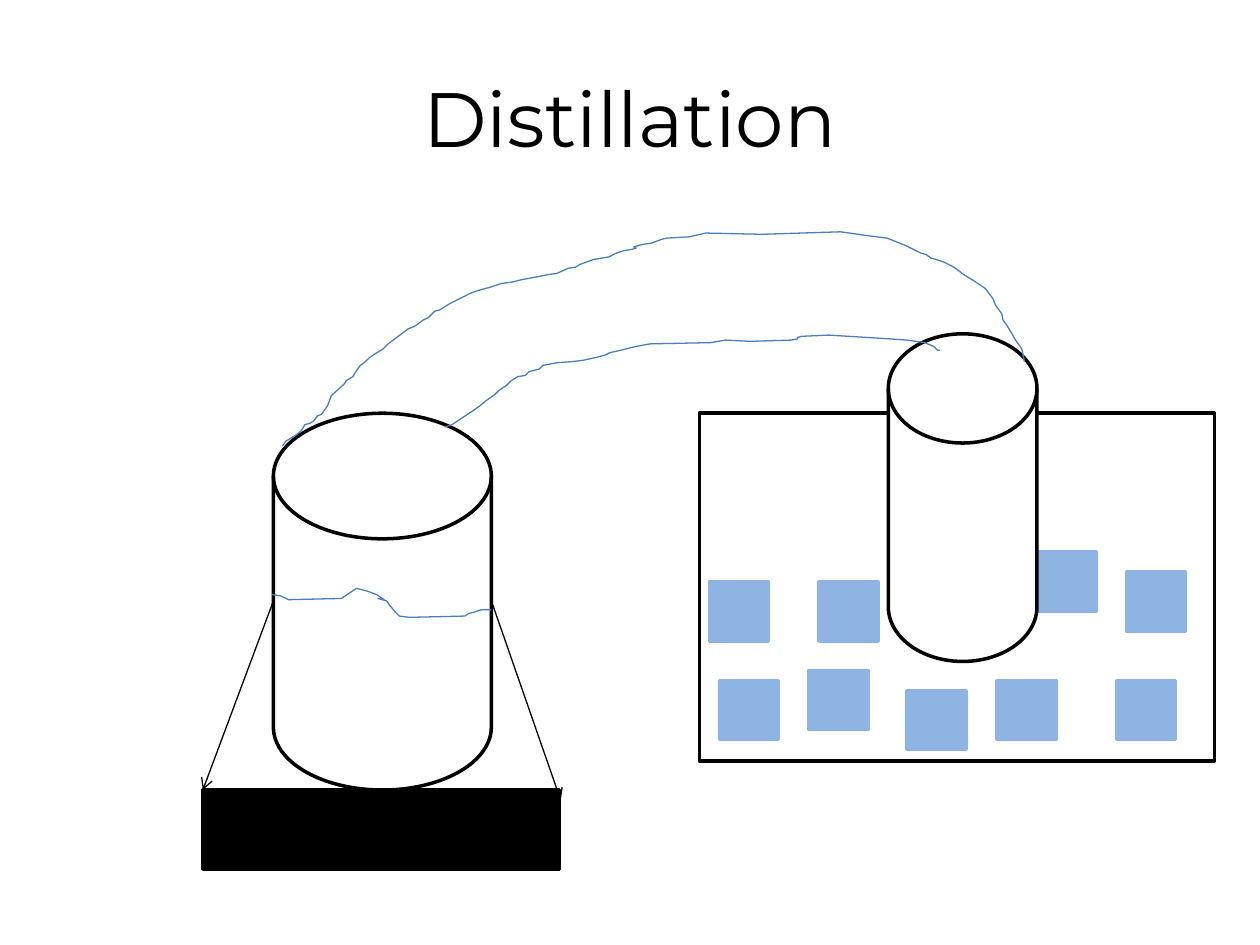
from lxml import etree
from pptx import Presentation
from pptx.dml.color import RGBColor
from pptx.enum.shapes import MSO_CONNECTOR, MSO_SHAPE
from pptx.enum.text import MSO_ANCHOR, PP_ALIGN
from pptx.oxml.ns import qn
from pptx.util import Inches, Pt

RECT = MSO_SHAPE.RECTANGLE
DISK = MSO_SHAPE.FLOWCHART_MAGNETIC_DISK
STRAIGHT = MSO_CONNECTOR.STRAIGHT
BLACK, WHITE, ICE, BLUE = "000000", "FFFFFF", "8EB4E3", "4B7EBC"

TITLE = "Distillation"
FLASK = (2.17, 3.28, 1.73, 2.99)
BURNER = (1.61, 6.27, 2.83, 0.63)
TANK = (5.55, 3.28, 4.09, 2.76)
TUBE = (7.05, 2.65, 1.18, 2.6)
CUBE = 0.47
CUBES = [(5.63, 4.62), (5.71, 5.4), (6.5, 4.62), (6.42, 5.32), (7.2, 5.48),
         (8.94, 4.54), (8.86, 5.4), (8.23, 4.38), (7.91, 5.4)]
HEAT = [((3.9, 4.77), (4.45, 6.35)), ((2.17, 4.77), (1.61, 6.27))]

WATER = [
    (2.16, 4.72), (2.23, 4.73), (2.29, 4.76), (2.71, 4.75), (2.8, 4.69),
    (2.83, 4.67), (2.91, 4.69), (2.99, 4.72), (3.05, 4.76), (3, 4.75),
    (3.07, 4.77), (3.09, 4.8), (3.14, 4.86), (3.17, 4.89), (3.25, 4.9),
    (3.69, 4.89), (3.72, 4.87), (3.76, 4.86), (3.82, 4.84), (3.9, 4.84),
]
PIPE_TOP = [
    (2.24, 3.54), (2.27, 3.5), (2.34, 3.46), (2.39, 3.42), (2.42, 3.37),
    (2.46, 3.36), (2.49, 3.34), (2.52, 3.3), (2.55, 3.29), (2.6, 3.22),
    (2.63, 3.14), (2.73, 3.05), (2.75, 3.02), (2.8, 2.99), (2.83, 2.94),
    (2.86, 2.9), (2.89, 2.88), (2.93, 2.84), (2.99, 2.8), (3.04, 2.77),
    (3.08, 2.73), (3.16, 2.67), (3.24, 2.61), (3.29, 2.59), (3.36, 2.54),
    (3.4, 2.52), (3.45, 2.47), (3.49, 2.46), (3.57, 2.41), (3.65, 2.37),
    (3.73, 2.33), (3.78, 2.31), (3.89, 2.28), (3.98, 2.25), (4.06, 2.24),
    (4.14, 2.22), (4.25, 2.2), (4.35, 2.18), (4.42, 2.17), (4.51, 2.13),
    (4.57, 2.12), (4.6, 2.1), (4.71, 2.06), (4.83, 2.04), (4.89, 2.01),
    (4.95, 1.99), (5.01, 1.98), (5.05, 1.97), (5.03, 1.96), (5.1, 1.94),
    (5.17, 1.93), (5.25, 1.9), (5.29, 1.89), (5.47, 1.88), (5.6, 1.85),
    (6.05, 1.86), (6.67, 1.84), (6.81, 1.86), (6.88, 1.87), (7.04, 1.89),
    (7.19, 1.95), (7.25, 1.98), (7.31, 2.01), (7.35, 2.02), (7.39, 2.05),
    (7.43, 2.06), (7.49, 2.08), (7.57, 2.12), (7.65, 2.18), (7.73, 2.23),
    (7.82, 2.29), (7.88, 2.37), (7.9, 2.42), (7.95, 2.49), (7.96, 2.54),
    (7.99, 2.58), (8.06, 2.7), (8.11, 2.77), (8.12, 2.82), (8.13, 2.87),
]
PIPE_LOW = [
    (3.53, 3.39), (3.59, 3.37), (3.68, 3.31), (3.77, 3.25), (3.81, 3.22),
    (3.86, 3.18), (3.93, 3.13), (3.96, 3.1), (4.02, 3.06), (4.06, 3.02),
    (4.11, 2.99), (4.17, 2.98), (4.2, 2.95), (4.28, 2.93), (4.31, 2.9),
    (4.42, 2.88), (4.55, 2.87), (4.63, 2.86), (4.72, 2.84), (4.8, 2.82),
    (4.84, 2.8), (4.93, 2.78), (5.05, 2.75), (5.16, 2.73), (5.64, 2.72),
    (5.76, 2.7), (5.95, 2.71), (6.28, 2.7), (6.33, 2.69), (6.33, 2.68),
    (6.36, 2.67), (6.58, 2.66), (7.06, 2.69), (7.2, 2.7), (7.34, 2.72),
    (7.41, 2.75), (7.44, 2.78), (7.46, 2.78),
]


def color(code):
    return RGBColor.from_string(code)


def outline(item, code, width):
    item.line.color.rgb = color(code)
    item.line.width = Pt(width)


def block(kind, box, fill, line=BLACK):
    item = shapes.add_shape(kind, *map(Inches, box))
    item.shadow.inherit = False
    item.fill.solid()
    item.fill.fore_color.rgb = color(fill)
    outline(item, line, 2)


def arrow(start, end):
    item = shapes.add_connector(STRAIGHT, *map(Inches, start + end))
    outline(item, BLACK, 0.75)
    tail = etree.SubElement(item.line._get_or_add_ln(), qn("a:tailEnd"))
    tail.set("type", "arrow")
    etree.SubElement(item._element.spPr, qn("a:effectLst"))


def sketch(points):
    """Draw an open hand-drawn line through the points."""
    first, *rest = [(Inches(x), Inches(y)) for x, y in points]
    pen = shapes.build_freeform(*first)
    pen.add_line_segments(rest, close=False)
    item = pen.convert_to_shape()
    item.shadow.inherit = False
    item.fill.background()
    outline(item, BLUE, 0.75)


deck = Presentation()
deck.slide_width, deck.slide_height = Inches(10), Inches(7.5)
slide = deck.slides.add_slide(deck.slide_layouts[5])
shapes = slide.shapes

title = shapes.title
title.left, title.top, title.width, title.height = map(Inches, (0.5, 0.3, 9, 1.25))
frame = title.text_frame
frame.vertical_anchor = MSO_ANCHOR.MIDDLE
para = frame.paragraphs[0]
para.alignment = PP_ALIGN.CENTER
run = para.add_run()
run.text = TITLE
run.font.name, run.font.size = "Montserrat", Pt(44)
run.font.color.rgb = color(BLACK)

block(DISK, FLASK, WHITE)
block(RECT, BURNER, BLACK)
for start, end in HEAT:
    arrow(start, end)
sketch(WATER)

block(RECT, TANK, WHITE)
for x, y in CUBES:
    block(RECT, (x, y, CUBE, CUBE), ICE, ICE)
block(DISK, TUBE, WHITE)
for pipe in (PIPE_TOP, PIPE_LOW):
    sketch(pipe)

deck.save("out.pptx")
